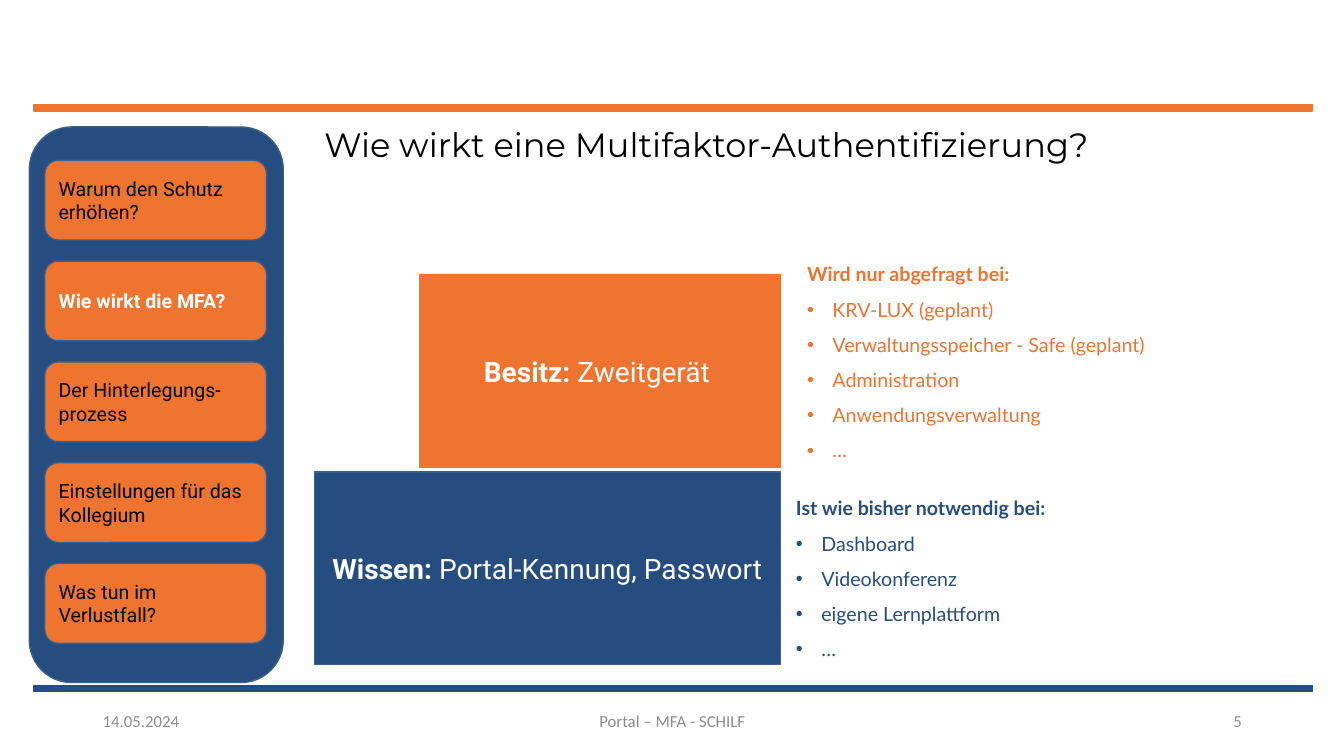
from lxml import etree
from pptx import Presentation
from pptx.dml.color import RGBColor
from pptx.enum.shapes import MSO_SHAPE
from pptx.enum.text import MSO_ANCHOR, MSO_AUTO_SIZE, PP_ALIGN
from pptx.oxml.ns import qn
from pptx.util import Cm, Pt

RECTANGLE = MSO_SHAPE.RECTANGLE
ROUNDED = MSO_SHAPE.ROUNDED_RECTANGLE
TOP, MIDDLE = MSO_ANCHOR.TOP, MSO_ANCHOR.MIDDLE
LEFT, CENTER, RIGHT = PP_ALIGN.LEFT, PP_ALIGN.CENTER, PP_ALIGN.RIGHT
NO_FIT = MSO_AUTO_SIZE.NONE

ORANGE = RGBColor(0xEF, 0x74, 0x30)
BLUE = RGBColor(0x26, 0x4D, 0x7F)
BAR_BLUE = RGBColor(0x25, 0x4D, 0x7F)
EDGE_BLUE = RGBColor(0x3A, 0x5F, 0x8C)
GRAY = RGBColor(0x8C, 0x8C, 0x8C)
BLACK = RGBColor(0, 0, 0)
WHITE = RGBColor(255, 255, 255)

TITLE_FONT, SHAPE_FONT, LIST_FONT, FOOTER_FONT = "Montserrat", "Roboto", "Lato", "Calibri"
TITLE_ONLY_LAYOUT = 5

TOPICS = [
    "Warum den Schutz erhöhen?",
    "Wie wirkt die MFA?",
    "Der Hinterlegungs-prozess",
    "Einstellungen für das Kollegium",
    "Was tun im Verlustfall?",
]
CURRENT_TOPIC = 1
TOPIC_TOP, TOPIC_PITCH = 4.04, 2.54


class SlideBuilder:
    def __init__(self, presentation):
        layout = presentation.slide_layouts[TITLE_ONLY_LAYOUT]
        self.slide = presentation.slides.add_slide(layout)

    def style(self, font, name, size, color, bold=False):
        font.name = name
        font.size = Pt(size)
        font.color.rgb = color
        font.bold = bold

    def title(self, text, left, top, width, height):
        shape = self.slide.shapes.title
        shape.left, shape.top, shape.width, shape.height = map(Cm, (left, top, width, height))
        frame = shape.text_frame
        frame.text = text
        frame.auto_size = NO_FIT
        frame.vertical_anchor = TOP
        paragraph = frame.paragraphs[0]
        paragraph.alignment = LEFT
        paragraph.line_spacing = 0.9
        self.style(paragraph.runs[0].font, TITLE_FONT, 24, BLACK)

    def block(self, kind, left, top, width, height, fill, edge):
        shape = self.slide.shapes.add_shape(kind, Cm(left), Cm(top), Cm(width), Cm(height))
        shape.shadow.inherit = False
        shape.fill.solid()
        shape.fill.fore_color.rgb = fill
        shape.line.color.rgb = edge
        shape.line.width = Pt(1)
        return shape

    def label(self, shape, parts, size, color, alignment):
        frame = shape.text_frame
        frame.word_wrap = True
        frame.vertical_anchor = MIDDLE
        paragraph = frame.paragraphs[0]
        paragraph.alignment = alignment
        for text, bold in parts:
            run = paragraph.add_run()
            run.text = text
            self.style(run.font, SHAPE_FONT, size, color, bold)

    def text_box(self, left, top, width, height):
        box = self.slide.shapes.add_textbox(Cm(left), Cm(top), Cm(width), Cm(height))
        frame = box.text_frame
        frame.word_wrap = True
        frame.vertical_anchor = MIDDLE
        return frame

    def footer(self, text, left, width, alignment):
        frame = self.text_box(left, 17.65, width, 1.02)
        frame.text = text
        paragraph = frame.paragraphs[0]
        paragraph.alignment = alignment
        self.style(paragraph.runs[0].font, FOOTER_FONT, 12, GRAY)

    def bullet_list(self, heading, items, color, left, top, width, height):
        frame = self.text_box(left, top, width, height)
        frame.text = "\n".join([heading, *items])
        for index, paragraph in enumerate(frame.paragraphs):
            paragraph.line_spacing = 0.9
            if index > 0:
                paragraph.space_before = Pt(10)
                self.add_bullet(paragraph)
            self.style(paragraph.runs[0].font, LIST_FONT, 14, color, index == 0)

    def add_bullet(self, paragraph):
        properties = paragraph._p.get_or_add_pPr()
        indent = Cm(0.64)
        properties.set("marL", str(indent))
        properties.set("indent", str(-indent))
        etree.SubElement(properties, qn("a:buFont")).set("typeface", "Arial")
        etree.SubElement(properties, qn("a:buChar")).set("char", "•")


def main():
    presentation = Presentation()
    presentation.slide_width = Cm(33.87)
    presentation.slide_height = Cm(19.05)
    builder = SlideBuilder(presentation)

    for top, color in ((2.64, ORANGE), (17.27, BAR_BLUE)):
        builder.block(RECTANGLE, 0.86, top, 32.21, 0.16, color, color)

    builder.title("Wie wirkt eine Multifaktor-Authentifizierung?", 7.92, 3.12, 24.51, 2.06)

    knowledge = builder.block(RECTANGLE, 7.92, 11.89, 11.75, 4.85, BLUE, EDGE_BLUE)
    builder.label(knowledge, [("Wissen: ", True), ("Portal-Kennung, Passwort", False)], 20, WHITE, CENTER)
    possession = builder.block(RECTANGLE, 10.59, 6.93, 9.08, 4.85, ORANGE, ORANGE)
    builder.label(possession, [("Besitz: ", True), ("Zweitgerät ", False)], 20, WHITE, CENTER)

    builder.bullet_list(
        "Wird nur abgefragt bei:",
        ["KRV-LUX (geplant)", "Verwaltungsspeicher - Safe (geplant)",
         "Administration", "Anwendungsverwaltung", "…"],
        ORANGE, 20.09, 5.92, 12.34, 6.48)
    builder.bullet_list(
        "Ist wie bisher notwendig bei:",
        ["Dashboard", "Videokonferenz", "eigene Lernplattform", "…"],
        BLUE, 19.81, 11.91, 11.66, 5.41)

    builder.block(ROUNDED, 0.74, 3.2, 6.4, 14, BLUE, EDGE_BLUE)
    for index, topic in enumerate(TOPICS):
        current = index == CURRENT_TOPIC
        top = TOPIC_TOP + index * TOPIC_PITCH
        button = builder.block(ROUNDED, 1.13, top, 5.59, 2.01, ORANGE, EDGE_BLUE)
        builder.label(button, [(topic, current)], 14, WHITE if current else BLACK, LEFT)

    builder.footer("14.05.2024", 2.34, 7.62, LEFT)
    builder.footer("Portal – MFA - SCHILF", 11.23, 11.43, CENTER)
    builder.footer("5", 23.93, 7.62, RIGHT)

    presentation.save("out.pptx")


if __name__ == "__main__":
    main()
